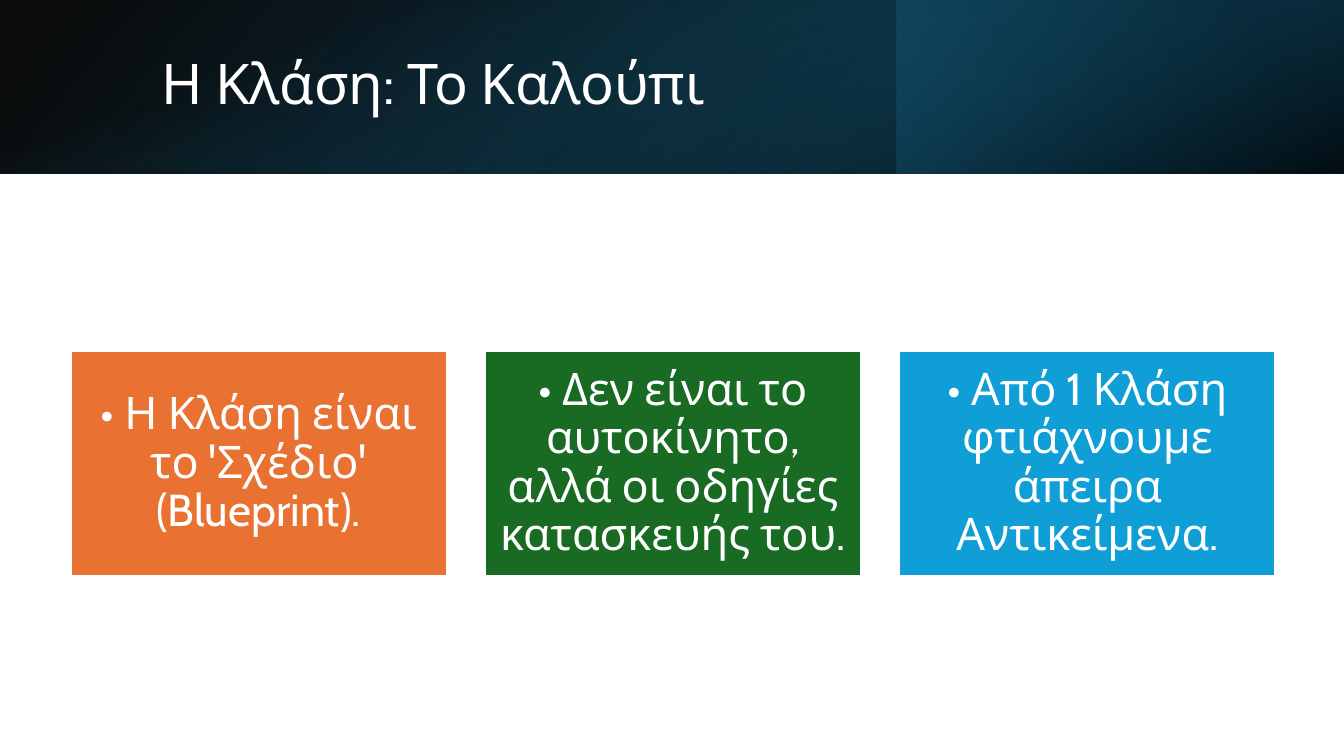
from pptx import Presentation
from pptx.dml.color import RGBColor
from pptx.enum.shapes import MSO_SHAPE
from pptx.enum.text import MSO_ANCHOR, MSO_AUTO_SIZE, PP_ALIGN
from pptx.oxml import parse_xml
from pptx.oxml.ns import nsdecls
from pptx.util import Inches, Pt

COLORS = {
    "white": "FFFFFF", "black": "000000", "navy": "104862", "deep": "0B3041",
    "teal": "156082", "orange": "E97132", "green": "196B24", "blue": "0F9ED5",
}
BANDS = [
    ((0, 0, 13.33, 1.72), 0, True, 140, [(0, "black", 96), (100, "navy", 100)]),
    ((8.89, 0, 4.44, 1.72), 180, False, 320, [(19, "deep", 68), (100, "teal", 79)]),
    ((5.8, -5.8, 1.72, 13.33), 90, False, 340, [(23, "teal", 0), (99, "black", 74)]),
]
CARDS = [
    ("orange", "• Η Κλάση είναι το 'Σχέδιο' (Blueprint)."),
    ("green", "• Δεν είναι το αυτοκίνητο, αλλά οι οδηγίες κατασκευής του."),
    ("blue", "• Από 1 Κλάση φτιάχνουμε άπειρα Αντικείμενα."),
]


def shade(name):
    return RGBColor.from_string(COLORS[name])


def write(shape, text, size=32, font="Cabin", color="white", align=PP_ALIGN.CENTER, inset=None):
    frame = shape.text_frame
    frame.text = text
    frame.word_wrap = True
    frame.auto_size = MSO_AUTO_SIZE.NONE
    frame.vertical_anchor = MSO_ANCHOR.MIDDLE
    if inset is not None:
        frame.margin_left = frame.margin_right = Inches(inset)
        frame.margin_top = frame.margin_bottom = Inches(inset)
    para = frame.paragraphs[0]
    para.alignment = align
    para.line_spacing = 0.9
    run = para.runs[0].font
    run.name, run.size = font, Pt(size)
    run.color.rgb = shade(color)


class Deck:
    """Hold the style and the current slide."""

    def __init__(self):
        self.show = Presentation()
        self.show.slide_width, self.show.slide_height = Inches(13.33), Inches(7.5)
        self.slide = self.show.slides.add_slide(self.show.slide_layouts[5])

    def rect(self, box):
        shape = self.slide.shapes.add_shape(MSO_SHAPE.RECTANGLE, *map(Inches, box))
        shape.shadow.inherit = False
        return shape

    def band(self, box, turn, flip, angle, stops):
        shape = self.rect(box)
        shape.rotation = turn
        shape.line.fill.background()
        shape.fill.background()
        props = shape._element.spPr
        if flip:
            props.xfrm.set("flipH", "1")
        marks = "".join(
            f'<a:gs pos="{pos * 1000}"><a:srgbClr val="{COLORS[name]}">'
            f'<a:alpha val="{alpha * 1000}"/></a:srgbClr></a:gs>'
            for pos, name, alpha in stops)
        blend = parse_xml(
            f'<a:gradFill {nsdecls("a")} rotWithShape="1"><a:gsLst>{marks}</a:gsLst>'
            f'<a:lin ang="{angle * 60000}" scaled="0"/></a:gradFill>')
        props.replace(props.find("{*}noFill"), blend)

    def title(self, text, box):
        shape = self.slide.shapes.title
        shape.left, shape.top, shape.width, shape.height = map(Inches, box)
        write(shape, text, size=40, align=PP_ALIGN.LEFT)
        self.slide.shapes._spTree.append(shape._element)

    def card(self, box, fill, text):
        shape = self.rect(box)
        shape.fill.solid()
        shape.fill.fore_color.rgb = shade(fill)
        shape.line.color.rgb = shade("white")
        shape.line.width = Pt(1.5)
        write(shape, text, inset=0.13)


def main():
    deck = Deck()
    for band in BANDS:
        deck.band(*band)
    deck.title("Η Κλάση: Το Καλούπι", (1.5, 0.38, 10.98, 0.96))
    for i, (fill, text) in enumerate(CARDS):
        deck.card((0.7 + 4.11 * i, 3.48, 3.73, 2.24), fill, text)
    deck.show.save("out.pptx")


if __name__ == "__main__":
    main()
